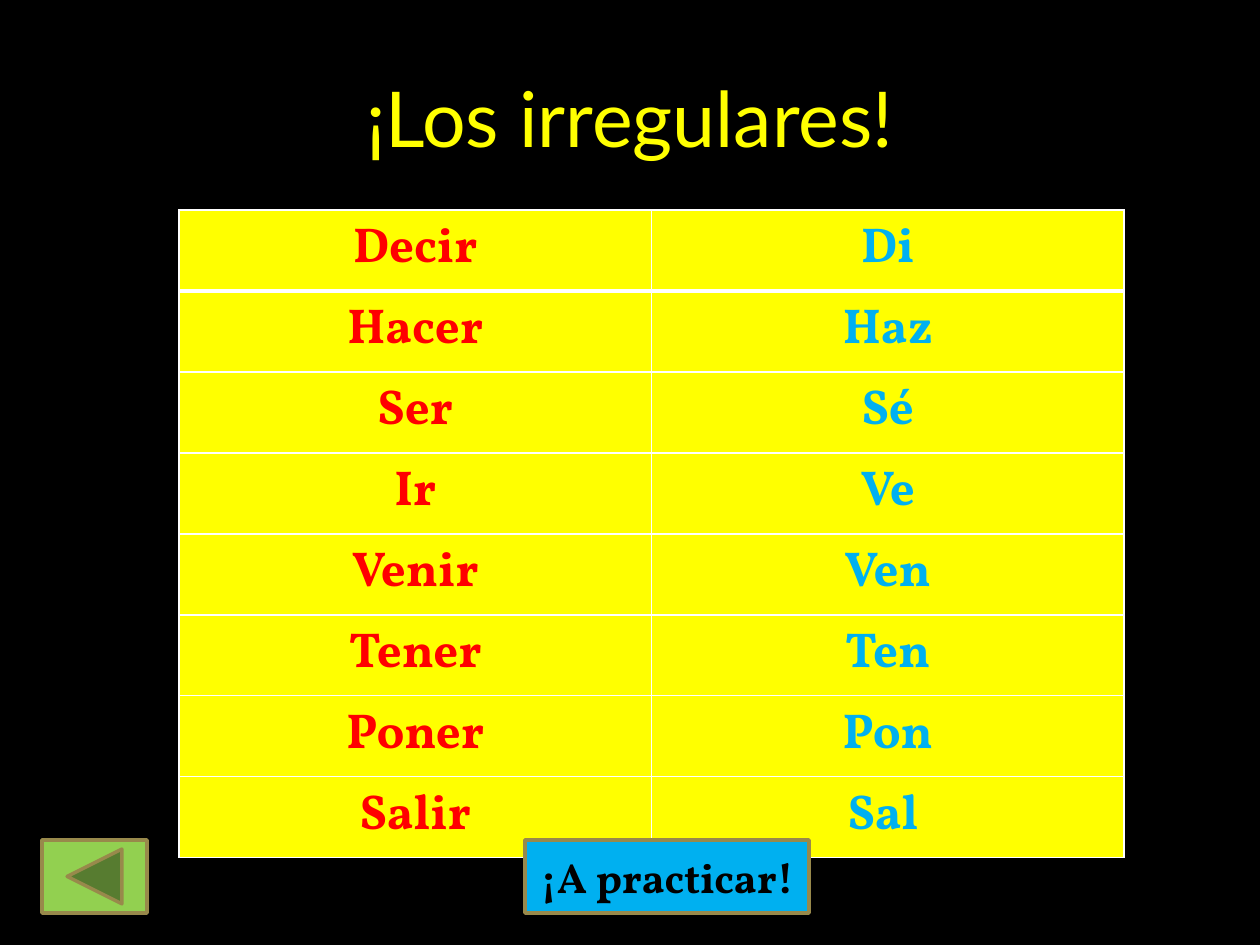
from lxml.etree import SubElement
from pptx import Presentation
from pptx.dml.color import RGBColor
from pptx.enum.shapes import MSO_SHAPE
from pptx.enum.text import MSO_ANCHOR, PP_ALIGN
from pptx.oxml.ns import qn
from pptx.util import Emu, Pt

VERBS = [("Decir", "Di"), ("Hacer", "Haz"), ("Ser", "Sé"), ("Ir", "Ve"),
         ("Venir", "Ven"), ("Tener", "Ten"), ("Poner", "Pon"),
         ("Salir", "Sal ")]
YELLOW, RED, BLUE = "FFFF00", "FF0000", "00B0F0"
BLACK, WHITE, GREEN, BROWN = "000000", "FFFFFF", "92D050", "98894B"
ROW = 81


def px(*sizes):
    return [Emu(round(size * 914400 / 126)) for size in sizes]


def paint(fill, color):
    fill.solid()
    fill.fore_color.rgb = RGBColor.from_string(color)


def write(frame, text, font, size, color, bold=False):
    frame.text = text
    para = frame.paragraphs[0]
    para.alignment = PP_ALIGN.CENTER
    face = para.runs[0].font
    face.name, face.size, face.bold = font, Pt(size), bold
    face.color.rgb = RGBColor.from_string(color)


def add_title(slide, box, text):
    frame = slide.shapes.add_textbox(*px(*box)).text_frame
    frame.word_wrap = True
    frame.vertical_anchor = MSO_ANCHOR.MIDDLE
    write(frame, text, "Lato", 44, YELLOW)


def add_border(cell, side, width):
    props = cell._tc.get_or_add_tcPr()
    line = SubElement(props, qn(f"a:ln{side}"), w=str(Pt(width)))
    fill = SubElement(line, qn("a:solidFill"))
    SubElement(fill, qn("a:srgbClr"), val=WHITE)


def add_verbs(slide, box):
    table = slide.shapes.add_table(len(VERBS), 2, *px(*box)).table
    for r, pair in enumerate(VERBS):
        table.rows[r].height = px(ROW)[0]
        for c, (word, color) in enumerate(zip(pair, (RED, BLUE))):
            cell = table.cell(r, c)
            # The rule under the first row is thicker
            top = 3 if r == 1 else 1
            base = 3 if r == 0 else 1
            for side, width in zip("LRTB", (1, 1, top, base)):
                add_border(cell, side, width)
            paint(cell.fill, YELLOW)
            write(cell.text_frame, word, "Vollkorn", 28, color, True)


def add_button(slide, kind, box, color, text=""):
    button = slide.shapes.add_shape(kind, *px(*box))
    button.shadow.inherit = False
    paint(button.fill, color)
    paint(button.line.fill, BROWN)
    button.line.width = Pt(2)
    if text:
        button.text_frame.vertical_anchor = MSO_ANCHOR.MIDDLE
        write(button.text_frame, text, "Vollkorn", 24, BLACK, True)


def main():
    deck = Presentation()
    deck.slide_width, deck.slide_height = px(1260, 945)
    slide = deck.slides.add_slide(deck.slide_layouts[6])
    paint(slide.background.fill, BLACK)

    # Heading and verb table
    add_title(slide, (63, 38, 1134, 157), "¡Los irregulares!")
    add_verbs(slide, (179, 210, 945, ROW * len(VERBS)))

    # Navigation buttons
    add_button(slide, MSO_SHAPE.ACTION_BUTTON_CUSTOM, (525, 840, 284, 73),
               BLUE, "¡A practicar!")
    add_button(slide, MSO_SHAPE.ACTION_BUTTON_BACK_OR_PREVIOUS,
               (42, 840, 105, 73), GREEN)
    deck.save("out.pptx")


if __name__ == "__main__":
    main()
